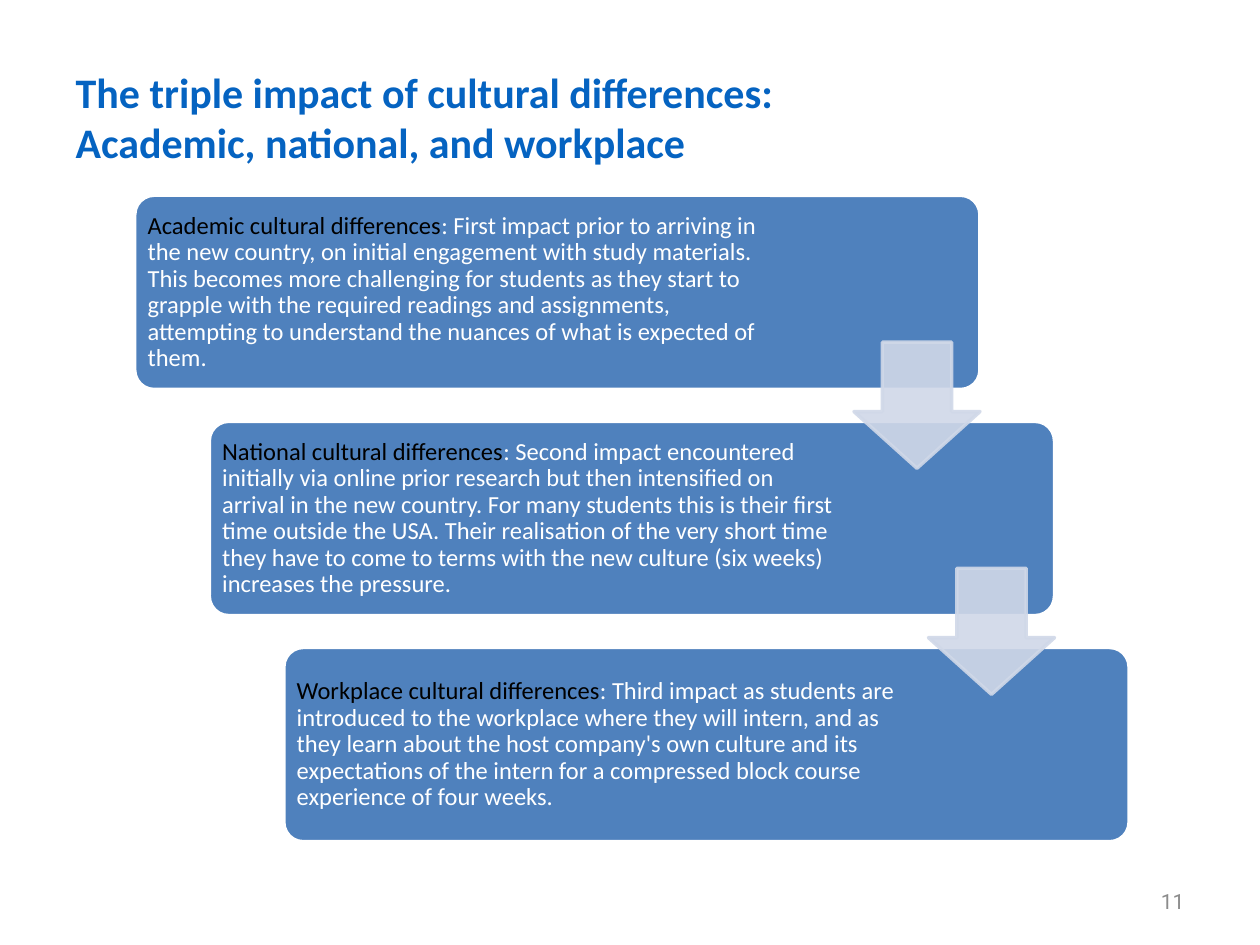
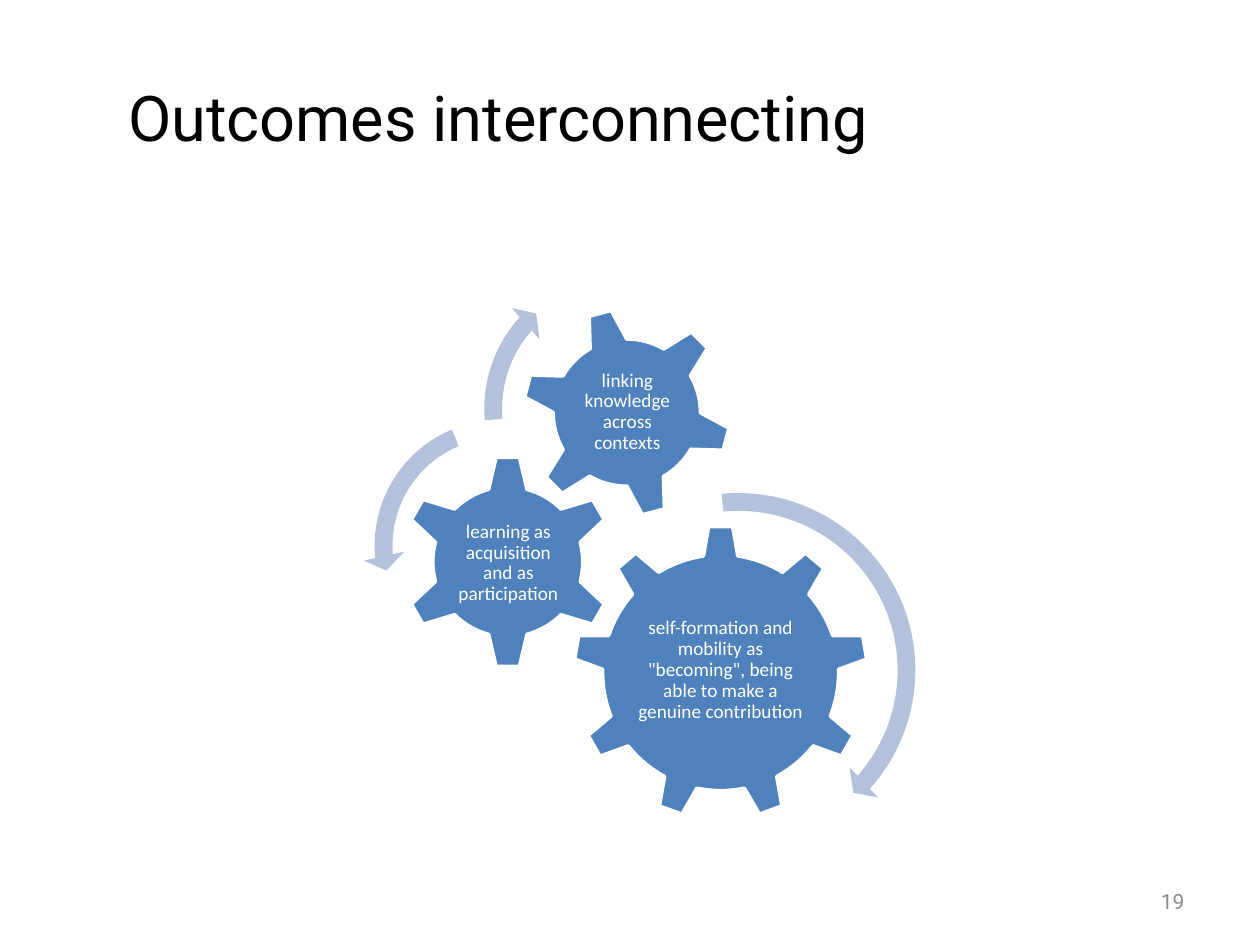
"""Build two slides on cultural differences and interconnecting outcomes."""
from dataclasses import dataclass

from lxml.etree import SubElement
from pptx import Presentation
from pptx.dml.color import RGBColor
from pptx.enum.shapes import MSO_SHAPE as Preset
from pptx.enum.text import MSO_ANCHOR as Anchor, MSO_AUTO_SIZE as AutoSize, PP_ALIGN as Align
from pptx.oxml.ns import qn
from pptx.shapes.autoshape import Shape
from pptx.slide import Slide
from pptx.util import Pt

BLACK = RGBColor(0x00, 0x00, 0x00)
WHITE = RGBColor(0xFF, 0xFF, 0xFF)
TITLE_BLUE = RGBColor(0x05, 0x63, 0xC1)
BODY_BLUE = RGBColor(0x4F, 0x81, 0xBD)
PALE_BLUE = RGBColor(0xD0, 0xD8, 0xE8)
ARC_BLUE = RGBColor(0xB3, 0xC1, 0xDB)
PAGE_GREY = RGBColor(0x8C, 0x8C, 0x8C)
BODY_FONT = "Calibri"
HEAD_FONT = "Roboto"

BAND_LEFT, BAND_TOP = 77, 111.6
BAND_WIDTH, BAND_HEIGHT = 483, 111
STEP_X, STEP_Y = 42.6, 129.2
BAND_PADDING = 3.2
ARROW_DX, ARROW_DY, ARROW_SIZE = 411, 84, 72


@dataclass(frozen=True)
class Box:
    """A rectangle in points."""
    left: float
    top: float
    width: float
    height: float

    def lengths(self) -> tuple[Pt, Pt, Pt, Pt]:
        """Return the four lengths as Pt."""
        return Pt(self.left), Pt(self.top), Pt(self.width), Pt(self.height)


@dataclass(frozen=True)
class Impact:
    """One step of the staircase."""
    term: str
    description: str
    text_width: float = 362.2


@dataclass(frozen=True)
class Gear:
    """A gear and the box of its label."""
    preset: Preset
    box: Box
    label_box: Box
    label: str
    rotation: float = 0


@dataclass(frozen=True)
class Arc:
    """A curved arrow showing how a gear turns."""
    preset: Preset
    box: Box
    adjustments: tuple[float, ...]


IMPACTS = (
    Impact("Academic cultural differences",
           ": First impact prior to arriving in the new country, on initial engagement with "
           "study materials. This becomes more challenging for students as they start to "
           "grapple with the required readings and assignments, attempting to understand the "
           "nuances of what is expected of them.", 364.3),
    Impact("National cultural differences",
           ": Second impact encountered initially via online prior research but then "
           "intensified on arrival in the new country. For many students this is their first "
           "time outside the USA. Their realisation of the very short time they have to come "
           "to terms with the new culture (six weeks) increases the pressure."),
    Impact("Workplace cultural differences",
           ": Third impact as students are introduced to the workplace where they will intern, "
           "and as they learn about the host company's own culture and its expectations of the "
           "intern for a compressed block course experience of four weeks."),
)

GEARS = (
    Gear(Preset.GEAR_9, Box(327.6, 300.2, 168.5, 168.5), Box(361.4, 339.8, 100.8, 86.4),
         "self-formation and mobility as \"becoming\", being able to make a genuine contribution"),
    Gear(Preset.GEAR_6, Box(229, 259.9, 122.4, 122.4), Box(259.9, 291.6, 61.2, 60.5),
         "learning as acquisition and as participation"),
    Gear(Preset.GEAR_6, Box(298.1, 175.7, 120.2, 120.2), Box(324.7, 201.6, 67.7, 67.7),
         "linking knowledge across contexts", 345),
)

ARCS = (
    Arc(Preset.CIRCULAR_ARROW, Box(313.9, 275, 216, 216),
        (0.047, 2.99, 25.087, 158.774, 0.055)),
    Arc(Preset.LEFT_CIRCULAR_ARROW, Box(207.4, 233.3, 157, 157),
        (0.065, 4.3, 104.891, 148.378, 0.075)),
    Arc(Preset.CIRCULAR_ARROW, Box(270, 149, 169.2, 169.2),
        (0.06, 3.941, 133.138, 105.082, 0.07)),
)


def add_preset(slide: Slide, preset: Preset, box: Box, fill: RGBColor,
               line: RGBColor | None = None, adjustments: tuple[float, ...] = ()) -> Shape:
    """Add a flat preset shape with an optional outline."""
    shape = slide.shapes.add_shape(preset, *box.lengths())
    shape.shadow.inherit = False
    shape.fill.solid()
    shape.fill.fore_color.rgb = fill
    if line is None:
        shape.line.fill.background()
    else:
        shape.line.color.rgb = line
        shape.line.width = Pt(2)
    for index, value in enumerate(adjustments):
        shape.adjustments[index] = value
    return shape


def set_opacity(shape: Shape, percent: int) -> None:
    """Make the fill and outline of a shape partly transparent."""
    for color in shape.element.spPr.iter(qn("a:srgbClr")):
        SubElement(color, qn("a:alpha"), val=str(percent * 1000))


def add_text(slide: Slide, box: Box, parts: tuple[tuple[str, RGBColor], ...], size: float,
             font: str = BODY_FONT, align: Align = Align.LEFT, inset: float | None = None,
             spacing: float = 1.0) -> None:
    """Add a middle-anchored paragraph made of coloured parts."""
    frame = slide.shapes.add_textbox(*box.lengths()).text_frame
    frame.word_wrap = True
    frame.vertical_anchor = Anchor.MIDDLE
    if inset is not None:
        frame.margin_left = frame.margin_right = Pt(inset)
        frame.margin_top = frame.margin_bottom = Pt(inset)
    paragraph = frame.paragraphs[0]
    paragraph.alignment = align
    paragraph.line_spacing = spacing
    paragraph.font.name = font
    paragraph.font.size = Pt(size)
    for text, color in parts:
        run = paragraph.add_run()
        run.text = text
        run.font.color.rgb = color


def add_titled_slide(deck: Presentation, title: str, page: str, font: str, size: float,
                     color: RGBColor, align: Align, bold: bool = False) -> Slide:
    """Add a slide with its title and page number."""
    slide = deck.slides.add_slide(deck.slide_layouts[5])
    heading = slide.shapes.title
    heading.left, heading.top, heading.width, heading.height = Box(36, 21.6, 497.5, 90).lengths()
    frame = heading.text_frame
    frame.text = title
    frame.word_wrap = True
    frame.auto_size = AutoSize.NONE
    frame.vertical_anchor = Anchor.MIDDLE
    paragraph = frame.paragraphs[0]
    paragraph.alignment = align
    paragraph.font.name = font
    paragraph.font.size = Pt(size)
    paragraph.font.bold = bold
    paragraph.font.color.rgb = color
    add_text(slide, Box(516.2, 500.4, 167.8, 28.8), ((page, PAGE_GREY),), 12,
             HEAD_FONT, Align.RIGHT)
    return slide


def build_impacts(deck: Presentation) -> None:
    """Build the staircase of three impacts."""
    slide = add_titled_slide(
        deck, "The triple impact of cultural differences: Academic, national, and workplace",
        "11", BODY_FONT, 24, TITLE_BLUE, Align.LEFT, bold=True)
    bands = [Box(BAND_LEFT + step * STEP_X, BAND_TOP + step * STEP_Y, BAND_WIDTH, BAND_HEIGHT)
             for step in range(len(IMPACTS))]
    for impact, band in zip(IMPACTS, bands):
        add_preset(slide, Preset.ROUNDED_RECTANGLE, band, BODY_BLUE, WHITE, (0.1,))
        text_box = Box(band.left + BAND_PADDING, band.top + BAND_PADDING,
                       impact.text_width, band.height - 2 * BAND_PADDING)
        add_text(slide, text_box, ((impact.term, BLACK), (impact.description, WHITE)), 14,
                 inset=4.2, spacing=0.9)
    for band in bands[:-1]:
        arrow_box = Box(band.left + ARROW_DX, band.top + ARROW_DY, ARROW_SIZE, ARROW_SIZE)
        arrow = add_preset(slide, Preset.DOWN_ARROW, arrow_box, PALE_BLUE, PALE_BLUE, (0.55, 0.45))
        set_opacity(arrow, 90)


def build_outcomes(deck: Presentation) -> None:
    """Build the three interlocking gears."""
    slide = add_titled_slide(deck, "Outcomes interconnecting", "19", HEAD_FONT, 36,
                             BLACK, Align.CENTER)
    for gear in GEARS:
        add_preset(slide, gear.preset, gear.box, BODY_BLUE, WHITE).rotation = gear.rotation
        add_text(slide, gear.label_box, ((gear.label, WHITE),), 11,
                 align=Align.CENTER, inset=1.1, spacing=0.9)
    for arc in ARCS:
        add_preset(slide, arc.preset, arc.box, ARC_BLUE, adjustments=arc.adjustments)


def main() -> None:
    """Build and save the deck."""
    deck = Presentation()
    deck.slide_width, deck.slide_height = Pt(720), Pt(540)
    build_impacts(deck)
    build_outcomes(deck)
    deck.save("out.pptx")


if __name__ == "__main__":
    main()
